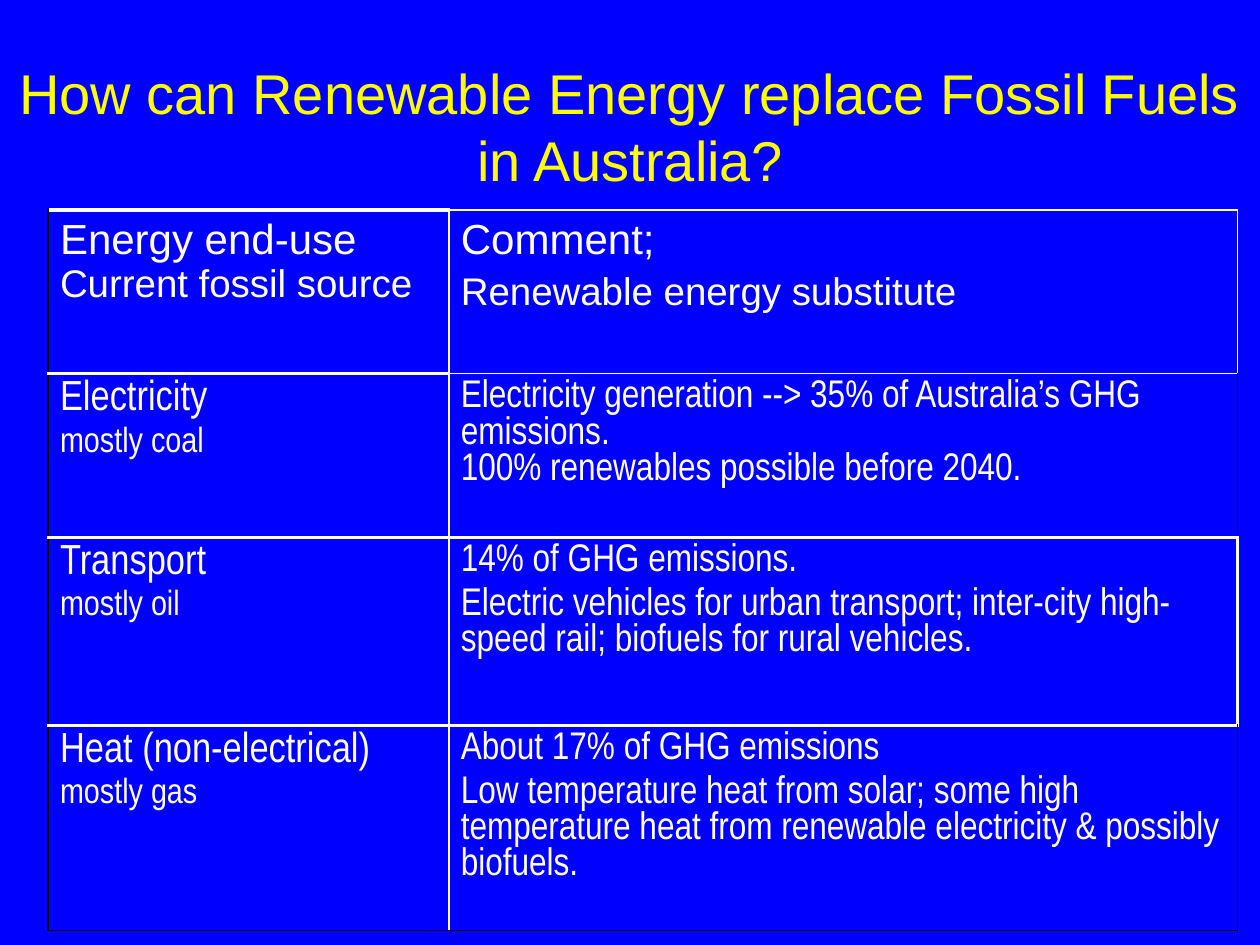
"""Build a slide on replacing fossil fuels with renewable energy in Australia."""
import pptx
import pptx.dml.color
import pptx.enum.text
import pptx.oxml
import pptx.oxml.ns
import pptx.util
from dataclasses import dataclass

Cm = pptx.util.Cm
Pt = pptx.util.Pt


@dataclass(frozen=True)
class Theme:
    background: str = "0000FF"
    title: str = "FFFF00"
    text: str = "FFFFFF"
    edge: str = "000000"
    wide_font: str = "Arial"
    narrow_font: str = "Arial Narrow"
    title_size: int = 32
    heading_size: int = 24
    body_size: int = 22
    source_size: int = 20


THEME = Theme()
THIN = (THEME.text, 1)
THICK = (THEME.text, 2.25)
EDGE = (THEME.edge, 1)

TITLE = "How can Renewable Energy replace Fossil Fuels in Australia?"
HEADER_USE = ("Energy end-use ", "Current fossil source")
HEADER_COMMENT = ("Comment;", "Renewable energy substitute")
END_USES = [
    ("Electricity", "mostly coal", [
        "Electricity generation --> 35% of Australia’s GHG emissions.\n"
        "100% renewables possible before 2040."]),
    ("Transport", "mostly oil", [
        "14% of GHG emissions.",
        "Electric vehicles for urban transport; inter-city high-speed rail; "
        "biofuels for rural vehicles."]),
    ("Heat (non-electrical)", "mostly gas", [
        "About 17% of GHG emissions",
        "Low temperature heat from solar; some high temperature heat from "
        "renewable electricity & possibly biofuels."]),
]
COLUMN_WIDTHS = (8.08, 15.9)
ROW_HEIGHTS = (3.3, 3.3, 3.79, 3.79)
COMMENT_BORDERS = [
    dict(L=THIN, R=THIN, T=THIN, B=THIN),
    dict(L=THIN, R=EDGE, T=THIN, B=THICK),
    dict(L=THIN, R=THICK, T=THICK, B=THICK),
    dict(L=THIN, R=EDGE, T=THICK, B=EDGE),
]


def color(value):
    return pptx.dml.color.RGBColor.from_string(value)


def write(paragraph, text, *, size, font=THEME.wide_font, fill=THEME.text,
          space=0, align=None):
    paragraph.alignment = align
    paragraph.space_before = Pt(space)
    for index, line in enumerate(text.split("\n")):
        if index:
            paragraph.add_line_break()
        run = paragraph.add_run()
        run.text = line
        run.font.size = Pt(size)
        run.font.name = font
        run.font.color.rgb = color(fill)


def write_cell(cell, lines, font):
    frame = cell.text_frame
    for index, (text, size) in enumerate(lines):
        paragraph = frame.add_paragraph() if index else frame.paragraphs[0]
        write(paragraph, text, size=size, font=font,
              space=round(size * 0.2, 1) if index else 0)


def set_borders(cell, borders):
    properties = cell._tc.get_or_add_tcPr()
    for index, side in enumerate("LRTB"):
        value, width = borders[side]
        line = pptx.oxml.parse_xml(
            f'<a:ln{side} {pptx.oxml.ns.nsdecls("a")} w="{int(Pt(width))}">'
            f'<a:solidFill><a:srgbClr val="{value}"/></a:solidFill></a:ln{side}>')
        properties.insert(index, line)


def add_title(slide, width):
    shape = slide.shapes.add_textbox(0, Cm(0.85), width, Cm(3.38))
    frame = shape.text_frame
    frame.word_wrap = True
    frame.vertical_anchor = pptx.enum.text.MSO_ANCHOR.MIDDLE
    write(frame.paragraphs[0], TITLE, size=THEME.title_size, fill=THEME.title,
          align=pptx.enum.text.PP_ALIGN.CENTER)


def add_energy_table(slide):
    row_count = len(ROW_HEIGHTS)
    table = slide.shapes.add_table(
        row_count, len(COLUMN_WIDTHS), Cm(0.97), Cm(4.23),
        Cm(sum(COLUMN_WIDTHS)), Cm(sum(ROW_HEIGHTS))).table
    table.first_row = table.horz_banding = False
    for column, width in zip(table.columns, COLUMN_WIDTHS):
        column.width = Cm(width)
    for row, height in zip(table.rows, ROW_HEIGHTS):
        row.height = Cm(height)

    heading, body = THEME.heading_size, THEME.body_size
    header = table.cell(0, 0).text_frame.paragraphs[0]
    write(header, HEADER_USE[0] + "\n", size=heading)
    write(header, HEADER_USE[1], size=body)
    write_cell(table.cell(0, 1), zip(HEADER_COMMENT, (heading, body)),
               THEME.wide_font)
    for row, (use, source, comments) in enumerate(END_USES, 1):
        write_cell(table.cell(row, 0),
                   [(use, heading), (source, THEME.source_size)],
                   THEME.narrow_font)
        write_cell(table.cell(row, 1), [(text, body) for text in comments],
                   THEME.narrow_font)

    for row in range(row_count):
        bottom = EDGE if row == row_count - 1 else THICK
        use_borders = dict(L=EDGE, R=THIN, T=THICK, B=bottom)
        for column, borders in enumerate((use_borders, COMMENT_BORDERS[row])):
            cell = table.cell(row, column)
            cell.margin_left = cell.margin_right = Cm(0.24)
            cell.margin_top = cell.margin_bottom = Cm(0.13)
            cell.fill.background()
            set_borders(cell, borders)


def main():
    presentation = pptx.Presentation()
    presentation.slide_width = Cm(25.4)
    presentation.slide_height = Cm(19.05)
    slide = presentation.slides.add_slide(presentation.slide_layouts[6])
    slide.background.fill.solid()
    slide.background.fill.fore_color.rgb = color(THEME.background)
    add_title(slide, presentation.slide_width)
    add_energy_table(slide)
    presentation.save("out.pptx")


if __name__ == "__main__":
    main()
